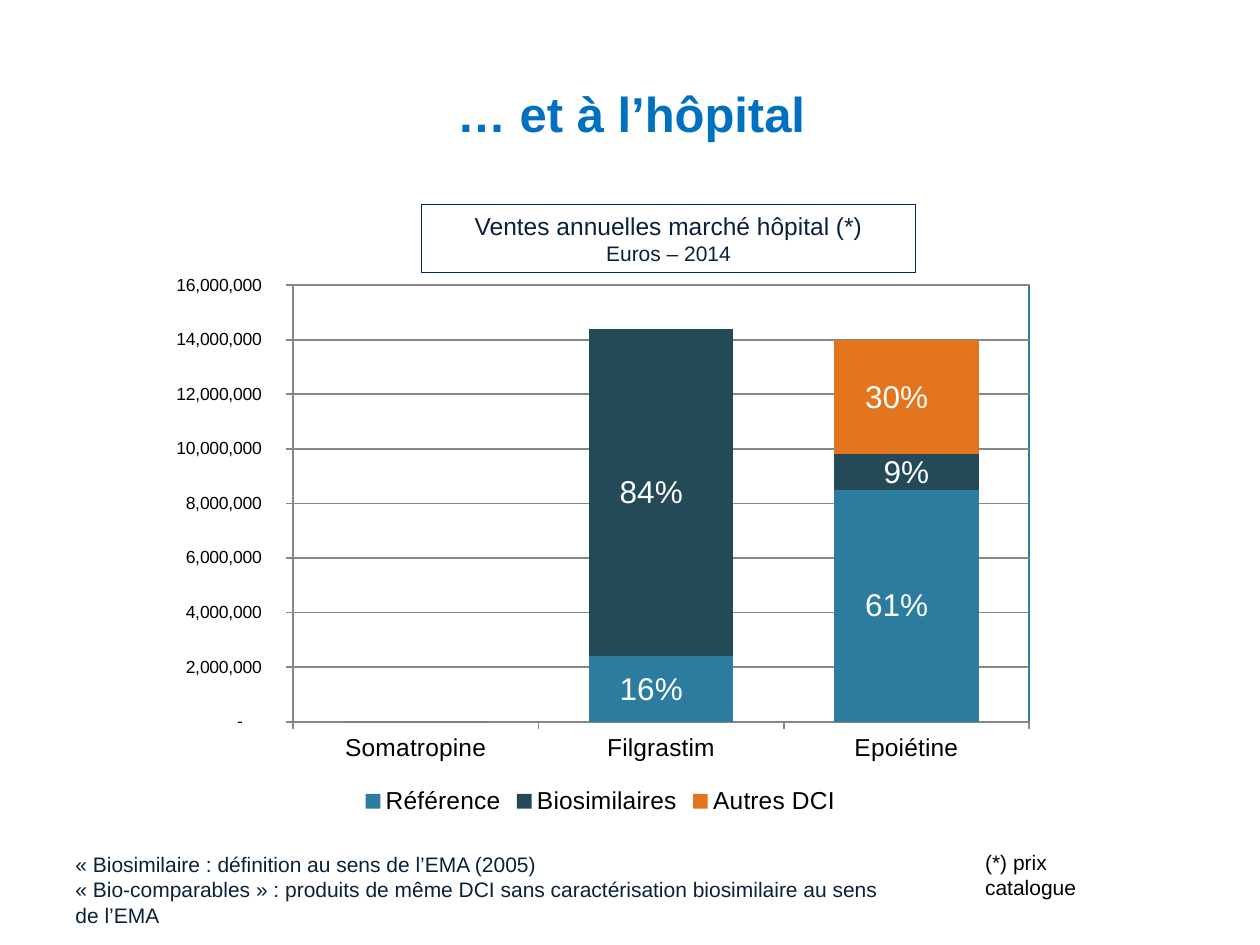
from pptx import Presentation
from pptx import util as u
from pptx.chart.data import CategoryChartData
from pptx.dml.color import RGBColor
from pptx.enum import chart as ch, shapes, text
from pptx.oxml import parse_xml
from pptx.oxml.ns import nsdecls

FONT = "Arial"
COLORS = {
    "title": "0070C0", "ink": "09213B", "black": "000000", "white": "FFFFFF",
    "frame": "002868", "grid": "878787",
    "reference": "2C7C9F", "biosimilar": "244A58", "other": "E2751D",
}
EURO_FORMAT = r'_-* #,##0\ _€_-;\-* #,##0\ _€_-;_-* "-"??\ _€_-'
MILLION = 1000000
CATEGORIES = ["Somatropine", "Filgrastim", "Epoiétine"]
# name, colour, sales in millions of euros, market shares by category index
SERIES = [
    ("Référence", "reference", (0, 2.4, 8.5), {1: "16%", 2: "61%"}),
    ("Biosimilaires", "biosimilar", (0, 12, 1.3), {1: "84%", 2: "9%"}),
    ("Autres DCI", "other", (0, None, 4.2), {2: "30%"}),
]


def rgb(name):
    return RGBColor.from_string(COLORS[name])


def place(prs, x, y, w, h):
    """Turn percentages of the slide's size into lengths."""
    return [int(size * share / 100) for size, share in
            zip((prs.slide_width, prs.slide_height) * 2, (x, y, w, h))]


def style(font, size, color, bold=False):
    font.name, font.size, font.bold = FONT, u.Pt(size), bold
    font.color.rgb = rgb(color)


def draw_line(line, color, width):
    line.color.rgb = rgb(color)
    line.width = u.Pt(width)


def write(tf, lines, color, align=text.PP_ALIGN.LEFT, bold=False):
    """Fill a text frame with (text, size) paragraphs."""
    tf.word_wrap = True
    tf.text = "\n".join(line for line, _ in lines)
    for p, (_, size) in zip(tf.paragraphs, lines):
        p.alignment = align
        for r in p.runs:
            style(r.font, size, color, bold)


def add_title(prs, s, title):
    sp = s.shapes.title
    sp.left, sp.top, sp.width, sp.height = place(prs, 5.1, 3.87, 90, 11.87)
    write(sp.text_frame, [(title, 28)], "title", text.PP_ALIGN.CENTER, True)
    sp.text_frame.vertical_anchor = text.MSO_ANCHOR.BOTTOM


def add_heading(prs, s, lines):
    sp = s.shapes.add_shape(shapes.MSO_SHAPE.RECTANGLE,
                            *place(prs, 33.46, 21.64, 39.2, 7.2))
    sp.shadow.inherit = False
    sp.fill.solid()
    sp.fill.fore_color.rgb = rgb("white")
    draw_line(sp.line, "frame", 0.75)
    write(sp.text_frame, lines, "ink", text.PP_ALIGN.CENTER)


def add_note(prs, s, box, lines, color):
    sp = s.shapes.add_textbox(*place(prs, *box))
    write(sp.text_frame, [(line, 12) for line in lines], color)


def format_axis(axis, size):
    axis.major_tick_mark = ch.XL_TICK_MARK.OUTSIDE
    style(axis.tick_labels.font, size, "black")
    draw_line(axis.format.line, "grid", 1)


def manual_layout(lead="", **shares):
    """Build a chart layout from percentages of the chart's size."""
    sides = "".join(f'<c:{side} val="{share / 100}"/>'
                    for side, share in shares.items())
    return parse_xml(f'<c:layout {nsdecls("c")}><c:manualLayout>{lead}{sides}'
                     '</c:manualLayout></c:layout>')


def frame_plot_area(chart):
    """Fix the inner plot area and give it a thin border."""
    area = chart._chartSpace.chart.plotArea
    for layout in area.findall("{*}layout"):
        area.remove(layout)
    area.insert(0, manual_layout(
        '<c:layoutTarget val="inner"/><c:xMode val="edge"/><c:yMode val="edge"/>',
        x=15.6, y=3.7, w=82.4, h=78.6))
    area.append(parse_xml(
        f'<c:spPr {nsdecls("c", "a")}><a:noFill/><a:ln w="9525"><a:solidFill>'
        f'<a:srgbClr val="{COLORS["reference"]}"/></a:solidFill></a:ln></c:spPr>'))


def label_shares(series, shares):
    """Write the market shares; two-digit ones sit slightly left of centre."""
    series.data_labels.show_value = False
    for index, share in shares.items():
        tf = series.points[index].data_label.text_frame
        tf.text = share
        style(tf.paragraphs[0].runs[0].font, 18, "white")
    for label in series.data_labels._element.findall("{*}dLbl"):
        index = label.find("{*}idx")
        if len(shares[int(index.get("val"))]) > 2:
            for layout in label.findall("{*}layout"):
                label.remove(layout)
            index.addnext(manual_layout(x=-1.1, y=0))


def add_sales_chart(prs, s):
    data = CategoryChartData()
    data.categories = CATEGORIES
    for name, _, values, _ in SERIES:
        data.add_series(name, [None if v is None else round(v * MILLION)
                               for v in values])
    chart = s.shapes.add_chart(ch.XL_CHART_TYPE.COLUMN_STACKED,
                               *place(prs, 12.2, 28, 70.9, 58.8), data).chart
    style(chart.font, 10, "black")
    chart.has_title = False

    # Axes
    format_axis(chart.category_axis, 14)
    axis = chart.value_axis
    format_axis(axis, 10)
    axis.minimum_scale, axis.maximum_scale = 0, 16 * MILLION
    axis.major_unit = 2 * MILLION
    axis.has_major_gridlines = True
    draw_line(axis.major_gridlines.format.line, "grid", 1)
    axis.tick_labels.number_format = EURO_FORMAT
    axis.tick_labels.number_format_is_linked = False

    # Columns and market-share labels
    plot = chart.plots[0]
    plot.gap_width, plot.overlap, plot.vary_by_categories = 70, 100, False
    for series, (_, color, _, shares) in zip(plot.series, SERIES):
        series.format.fill.solid()
        series.format.fill.fore_color.rgb = rgb(color)
        label_shares(series, shares)

    # Legend
    chart.has_legend = True
    chart.legend.position = ch.XL_LEGEND_POSITION.BOTTOM
    chart.legend.include_in_layout = False
    style(chart.legend.font, 14, "black")
    frame_plot_area(chart)


def main():
    prs = Presentation()
    prs.slide_width, prs.slide_height = u.Inches(10), u.Inches(7.5)
    s = prs.slides.add_slide(prs.slide_layouts[5])
    add_title(prs, s, "… et à l’hôpital")
    add_sales_chart(prs, s)
    add_heading(prs, s, [("Ventes annuelles marché hôpital (*)", 14),
                         ("Euros – 2014", 12)])
    add_note(prs, s, (5, 89.47, 66.8, 6.67), [
        "« Biosimilaire : définition au sens de l’EMA (2005)",
        "« Bio-comparables » : produits de même DCI sans caractérisation "
        "biosimilaire au sens de l’EMA"], "ink")
    add_note(prs, s, (77.2, 89.2, 13.9, 4), ["(*) prix catalogue"], "black")
    prs.save("out.pptx")


if __name__ == "__main__":
    main()
